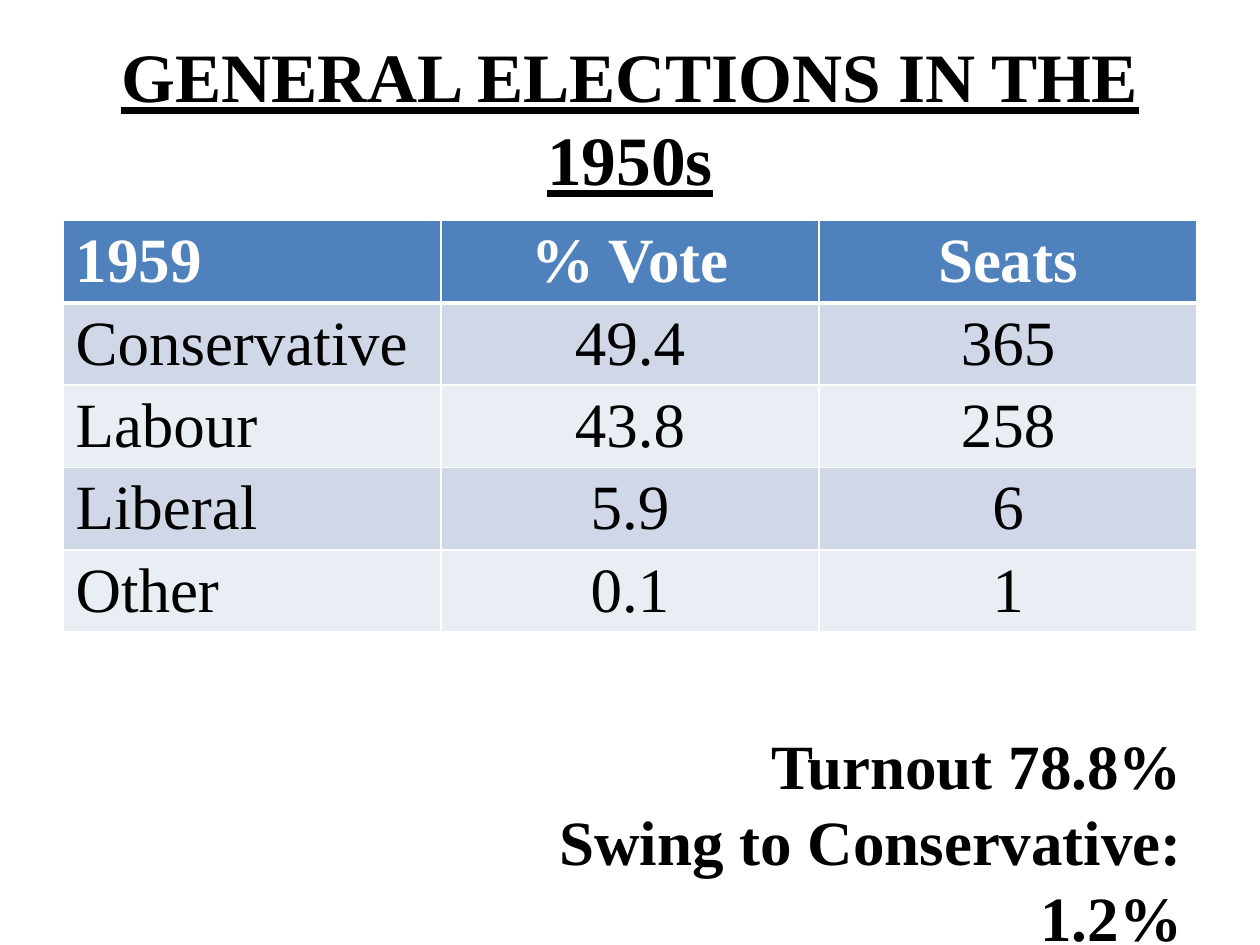
from dataclasses import dataclass

from lxml import etree
from pptx import Presentation
from pptx.dml.color import RGBColor
from pptx.enum.text import MSO_ANCHOR, MSO_AUTO_SIZE, MSO_UNDERLINE, PP_ALIGN
from pptx.oxml.ns import qn
from pptx.util import Inches, Pt

LEFT, CENTER, RIGHT = PP_ALIGN.LEFT, PP_ALIGN.CENTER, PP_ALIGN.RIGHT
MIDDLE = MSO_ANCHOR.MIDDLE
GROW = MSO_AUTO_SIZE.SHAPE_TO_FIT_TEXT
HEAVY = MSO_UNDERLINE.HEAVY_LINE

TITLE = "GENERAL ELECTIONS IN THE 1950s"
RESULTS = [
    ("1959", "% Vote", "Seats"),
    ("Conservative", "49.4", "365"),
    ("Labour", "43.8", "258"),
    ("Liberal", "5.9", "6"),
    ("Other", "0.1", "1"),
]
SUMMARY = ["Turnout 78.8%", "Swing to Conservative: 1.2%"]

TITLE_BOX = (0.5, 0.3, 9, 1.25)
TABLE_LEFT, TABLE_TOP, TABLE_WIDTH, ROW_HEIGHT = 0.5, 1.75, 9, 0.65
SUMMARY_BOX = (3.35, 5.72, 6.13, 1.31)


@dataclass(frozen=True)
class Theme:
    font: str = "Times New Roman"
    title_size: float = 39.6
    text_size: float = 36
    ink: str = "000000"
    paper: str = "FFFFFF"
    header: str = "4F81BD"
    bands: tuple = ("D0D8E8", "E9EDF4")
    rule: float = 1
    header_rule: float = 3


THEME = Theme()


def style(paragraph, align, size=THEME.text_size, color=THEME.ink, bold=True):
    paragraph.alignment = align
    font = paragraph.font
    font.name, font.size, font.bold = THEME.font, Pt(size), bold
    font.color.rgb = RGBColor.from_string(color)


def add_borders(cell, widths):
    """Draw cell borders; widths maps a side (L, R, T, B) to points."""
    properties = cell._tc.get_or_add_tcPr()
    for position, (side, width) in enumerate(widths.items()):
        line = etree.Element(qn(f"a:ln{side}"), w=str(Pt(width)))
        fill = etree.SubElement(line, qn("a:solidFill"))
        etree.SubElement(fill, qn("a:srgbClr"), val=THEME.paper)
        properties.insert(position, line)


def add_title(slide):
    title = slide.shapes.title
    title.left, title.top, title.width, title.height = map(Inches, TITLE_BOX)
    frame = title.text_frame
    frame.text, frame.vertical_anchor, frame.word_wrap = TITLE, MIDDLE, True
    heading = frame.paragraphs[0]
    style(heading, CENTER, THEME.title_size)
    heading.font.underline = HEAVY


def add_results(slide):
    row_count, column_count = len(RESULTS), len(RESULTS[0])
    table = slide.shapes.add_table(
        row_count, column_count, Inches(TABLE_LEFT), Inches(TABLE_TOP),
        Inches(TABLE_WIDTH), Inches(ROW_HEIGHT * row_count)).table
    for r, values in enumerate(RESULTS):
        is_header = r == 0
        fill = THEME.header if is_header else THEME.bands[(r - 1) % 2]
        borders = dict.fromkeys("LRTB", THEME.rule)
        if is_header:
            borders["B"] = THEME.header_rule
        elif r == 1:
            borders["T"] = THEME.header_rule
        for c, value in enumerate(values):
            cell = table.cell(r, c)
            cell.text = value
            style(cell.text_frame.paragraphs[0], CENTER if c else LEFT,
                  color=THEME.paper if is_header else THEME.ink, bold=is_header)
            cell.fill.solid()
            cell.fill.fore_color.rgb = RGBColor.from_string(fill)
            add_borders(cell, borders)


def add_summary(slide):
    frame = slide.shapes.add_textbox(*map(Inches, SUMMARY_BOX)).text_frame
    frame.word_wrap, frame.auto_size = True, GROW
    frame.text = "\n".join(SUMMARY)
    for paragraph in frame.paragraphs:
        style(paragraph, RIGHT)


def main():
    deck = Presentation()
    deck.slide_width, deck.slide_height = Inches(10), Inches(7.5)
    slide = deck.slides.add_slide(deck.slide_layouts.get_by_name("Title Only"))
    add_title(slide)
    add_results(slide)
    add_summary(slide)
    deck.save("out.pptx")


if __name__ == "__main__":
    main()
